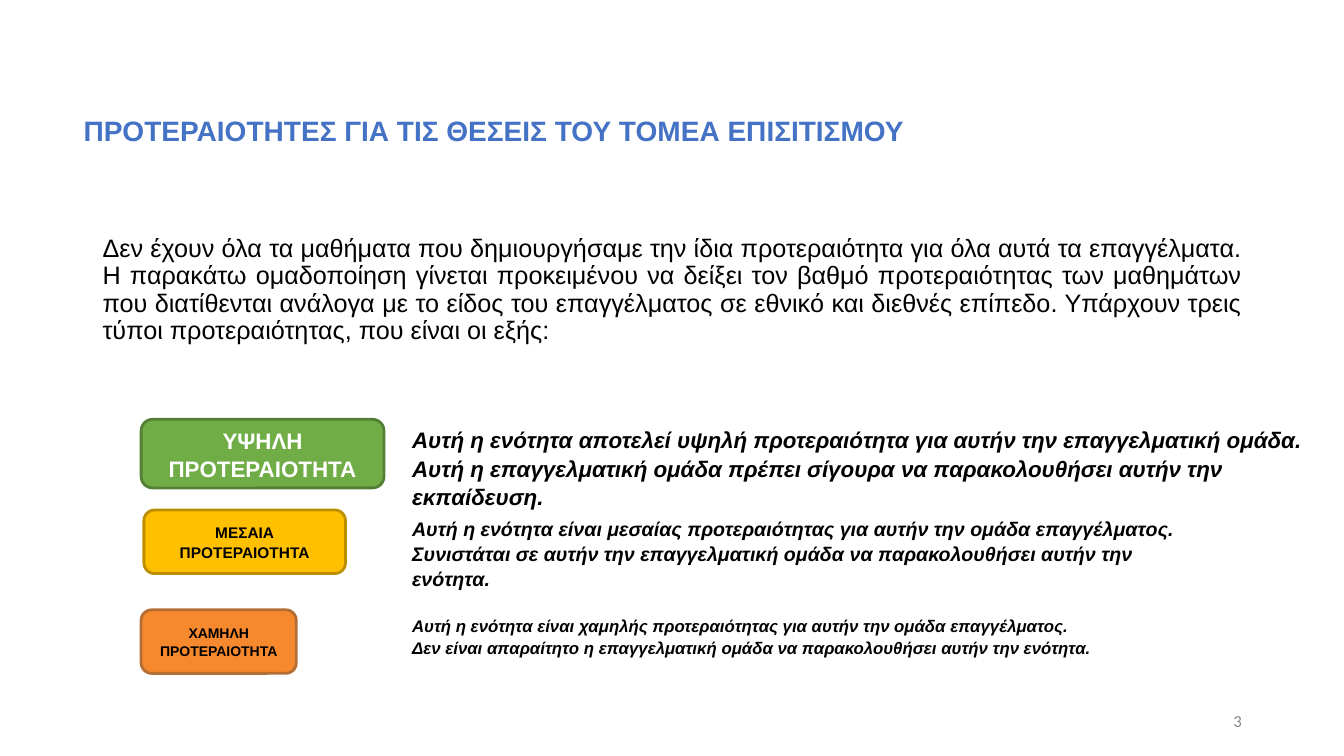
from dataclasses import dataclass

import pptx
import pptx.dml.color
import pptx.enum.shapes
import pptx.enum.text
import pptx.util

Pt = pptx.util.Pt
Align = pptx.enum.text.PP_ALIGN
Anchor = pptx.enum.text.MSO_ANCHOR

BLACK = "000000"
LABEL_LEFT = 100.8
DESCRIPTION_LEFT = 287.3


@dataclass(frozen=True)
class Box:
    left: float
    top: float
    width: float
    height: float

    def lengths(self) -> tuple[int, int, int, int]:
        return Pt(self.left), Pt(self.top), Pt(self.width), Pt(self.height)


@dataclass(frozen=True)
class TextStyle:
    size: float
    color: str = BLACK
    font_name: str = "Arial"
    bold: bool = False
    italic: bool = False
    align: Align = Align.LEFT
    line_spacing: float = 1.0
    anchor: Anchor = Anchor.TOP


@dataclass(frozen=True)
class Priority:
    label: str
    label_box: Box
    label_size: float
    label_color: str
    fill: str
    outline: str
    sentences: tuple[str, ...]
    description_width: float
    description_height: float
    description_size: float


PRIORITIES = (
    Priority(
        "ΥΨΗΛΗ ΠΡΟΤΕΡΑΙΟΤΗΤΑ", Box(LABEL_LEFT, 299.5, 173.5, 49), 16, "FFFFFF",
        "70AD47", "538035",
        ("Αυτή η ενότητα αποτελεί υψηλή προτεραιότητα για αυτήν την επαγγελματική ομάδα.",
         "Αυτή η επαγγελματική ομάδα πρέπει σίγουρα να παρακολουθήσει αυτήν την εκπαίδευση."),
        668.2, 69.8, 16,
    ),
    Priority(
        "ΜΕΣΑΙΑ ΠΡΟΤΕΡΑΙΟΤΗΤΑ", Box(LABEL_LEFT + 2, 364.3, 144, 45.4), 11, BLACK,
        "FFC000", "BD8E00",
        ("Αυτή η ενότητα είναι μεσαίας προτεραιότητας για αυτήν την ομάδα επαγγέλματος. "
         "Συνιστάται σε αυτήν την επαγγελματική ομάδα να παρακολουθήσει αυτήν την ενότητα.",),
        573.1, 61.9, 14,
    ),
    Priority(
        "ΧΑΜΗΛΗ ΠΡΟΤΕΡΑΙΟΤΗΤΑ", Box(LABEL_LEFT, 435.6, 110.9, 45.4), 10, BLACK,
        "F6882E", "B46D33",
        ("Αυτή η ενότητα είναι χαμηλής προτεραιότητας για αυτήν την ομάδα επαγγέλματος.",
         "Δεν είναι απαραίτητο η επαγγελματική ομάδα να παρακολουθήσει αυτήν την ενότητα."),
        630.7, 38.2, 12,
    ),
)


def rgb(color: str) -> pptx.dml.color.RGBColor:
    return pptx.dml.color.RGBColor.from_string(color)


def write_text(shape, texts: tuple[str, ...], style: TextStyle) -> None:
    frame = shape.text_frame
    frame.word_wrap = True
    frame.vertical_anchor = style.anchor
    for index, text in enumerate(texts):
        paragraph = frame.add_paragraph() if index else frame.paragraphs[0]
        paragraph.text = text
        paragraph.alignment = style.align
        paragraph.line_spacing = style.line_spacing
        paragraph.font.name = style.font_name
        paragraph.font.size = Pt(style.size)
        paragraph.font.bold = style.bold
        paragraph.font.italic = style.italic
        paragraph.font.color.rgb = rgb(style.color)


def add_text(slide, box: Box, texts: tuple[str, ...], style: TextStyle):
    shape = slide.shapes.add_textbox(*box.lengths())
    write_text(shape, texts, style)
    return shape


def add_priority(slide, priority: Priority) -> None:
    shape = slide.shapes.add_shape(
        pptx.enum.shapes.MSO_SHAPE.ROUNDED_RECTANGLE, *priority.label_box.lengths())
    shape.shadow.inherit = False
    shape.fill.solid()
    shape.fill.fore_color.rgb = rgb(priority.fill)
    shape.line.color.rgb = rgb(priority.outline)
    shape.line.width = Pt(2)
    write_text(shape, (priority.label,), TextStyle(
        priority.label_size, priority.label_color, bold=True, align=Align.CENTER,
        line_spacing=1.07, anchor=Anchor.MIDDLE))

    description_box = Box(DESCRIPTION_LEFT, priority.label_box.top,
                          priority.description_width, priority.description_height)
    add_text(slide, description_box, priority.sentences, TextStyle(
        priority.description_size, bold=True, italic=True, line_spacing=1.07))


def main() -> None:
    presentation = pptx.Presentation()
    presentation.slide_width = Pt(960)
    presentation.slide_height = Pt(540)
    slide = presentation.slides.add_slide(presentation.slide_layouts[6])

    title = add_text(
        slide, Box(52.6, 51.8, 854.6, 112.3),
        ("ΠΡΟΤΕΡΑΙΟΤΗΤΕΣ ΓΙΑ ΤΙΣ ΘΕΣΕΙΣ ΤΟΥ ΤΟΜΕΑ ΕΠΙΣΙΤΙΣΜΟΥ",),
        TextStyle(20, "4472C4", bold=True, line_spacing=0.9, anchor=Anchor.MIDDLE))
    title.text_frame.margin_bottom = Pt(30)

    add_text(
        slide, Box(66.2, 164.9, 828, 112.3),
        ("Δεν έχουν όλα τα μαθήματα που δημιουργήσαμε την ίδια προτεραιότητα για όλα αυτά "
         "τα επαγγέλματα. Η παρακάτω ομαδοποίηση γίνεται προκειμένου να δείξει τον βαθμό "
         "προτεραιότητας των μαθημάτων που διατίθενται ανάλογα με το είδος του επαγγέλματος "
         "σε εθνικό και διεθνές επίπεδο. Υπάρχουν τρεις τύποι προτεραιότητας, που είναι οι "
         "εξής:",),
        TextStyle(18, align=Align.JUSTIFY, line_spacing=0.9))

    for priority in PRIORITIES:
        add_priority(slide, priority)

    add_text(slide, Box(678.2, 500.4, 216, 28.8), ("3",), TextStyle(
        12, "888888", "Calibri", align=Align.RIGHT, anchor=Anchor.MIDDLE))

    presentation.save("out.pptx")


if __name__ == "__main__":
    main()
